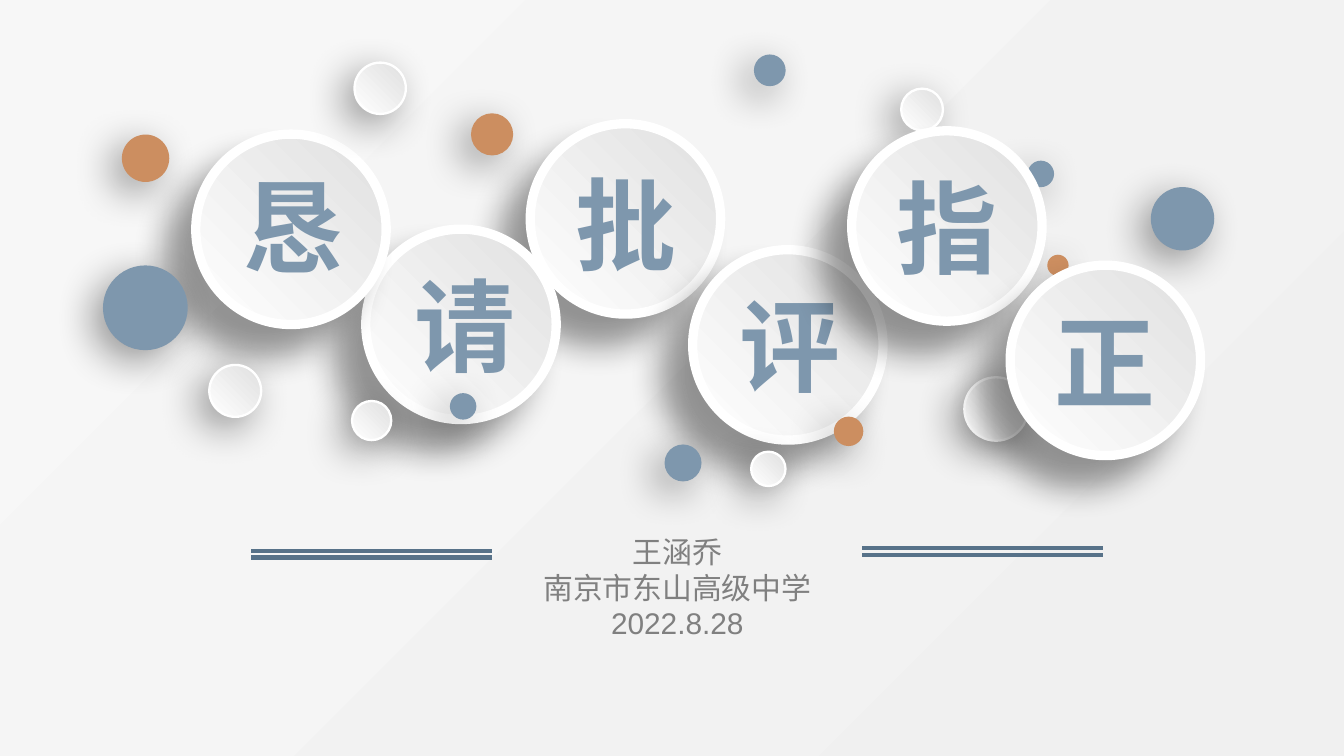
from lxml import etree
from pptx import Presentation
from pptx.dml.color import RGBColor
from pptx.enum import shapes, text
from pptx.oxml import ns
from pptx.util import Pt

BLUE = RGBColor(0x7E, 0x97, 0xAD)
ORANGE = RGBColor(0xCC, 0x8E, 0x60)
RULE = RGBColor(0x57, 0x72, 0x89)
GRAY = RGBColor(0x80, 0x80, 0x80)
WHITE = RGBColor(0xFF, 0xFF, 0xFF)
SILVER = RGBColor(0xE0, 0xE0, 0xE0)
BACK_DARK = RGBColor(0xF0, 0xF0, 0xF0)
BACK_LIGHT = RGBColor(0xF7, 0xF7, 0xF7)

DISC_SIZE = 102
GLYPH_WIDTH, GLYPH_HEIGHT = 70.6, 72.7
RULE_LENGTH, RULE_GAP = 129.3, 3.7

BACK_DISCS = [
    ("批", 335.1, 117.3, 335.5, 119.9),
    ("评", 422.1, 184.8, 423.4, 184.7),
    ("请", 247, 173.8, 249.1, 173.9),
    ("恳", 155.9, 122.9, 157, 121.3),
]
FRONT_DISCS = [("指", 507.3, 121.1), ("正", 592.2, 193.1)]
BUBBLES = [
    (533.6, 219.1, 34, None),
    (199.1, 225.3, 21, None),
    (633.5, 117.2, 34, BLUE),
    (77.9, 164.9, 45.4, BLUE),
    (126, 209.4, 27.8, None),
    (494, 58.7, 22.4, None),
    (203.7, 47.3, 27.5, None),
    (411.6, 251.2, 18.4, None),
    (78, 84.8, 25.4, ORANGE),
    (263.6, 72, 22.6, ORANGE),
    (454.6, 231.1, 15.8, ORANGE),
    (412.4, 37.7, 17, BLUE),
    (248.1, 217.7, 14.2, BLUE),
    (566.8, 142.2, 11.4, ORANGE),
    (365.9, 248, 19.8, BLUE),
    (557.6, 93.2, 14.2, BLUE),
]
RULES = [(134.5, 295), (461.8, 293.5)]
SPEAKER = ["王涵乔", "南京市东山高级中学", "2022.8.28"]


def fill_gradient(fill, start, end, angle):
    fill.gradient()
    fill.gradient_angle = angle
    for stop, color in zip(fill.gradient_stops, (start, end)):
        stop.color.rgb = color


def cast_shadow(circle, blur, distance):
    circle.shadow.inherit = False
    effects = circle._element.spPr.find(ns.qn("a:effectLst"))
    shadow = etree.SubElement(
        effects, ns.qn("a:outerShdw"), blurRad=str(Pt(blur)),
        dist=str(Pt(distance)), dir="8100000", algn="tr", rotWithShape="0")
    black = etree.SubElement(shadow, ns.qn("a:srgbClr"), val="000000")
    etree.SubElement(black, ns.qn("a:alpha"), val="40000")


def add_circle(slide, x, y, size, color, border, blur, distance):
    circle = slide.shapes.add_shape(
        shapes.MSO_SHAPE.OVAL, Pt(x - size / 2), Pt(y - size / 2),
        Pt(size), Pt(size))
    if color is None:
        fill_gradient(circle.fill, SILVER, WHITE, 225)
        circle.line.color.rgb = WHITE
        circle.line.width = Pt(border)
    else:
        circle.fill.solid()
        circle.fill.fore_color.rgb = color
        circle.line.fill.background()
    cast_shadow(circle, blur, distance)
    return circle


def add_disc(slide, x, y):
    return add_circle(slide, x, y, DISC_SIZE, None, 5, 18, 21)


def add_bubble(slide, x, y, size, color):
    add_circle(slide, x, y, size, color, 1.25, 22, 8)


def write_glyph(frame, glyph):
    frame.word_wrap = True
    frame.text = glyph
    paragraph = frame.paragraphs[0]
    paragraph.alignment = text.PP_ALIGN.CENTER
    font = paragraph.runs[0].font
    font.name = "Arial Narrow"
    font.size = Pt(54)
    font.bold = True
    font.color.rgb = BLUE


def add_glyph(slide, glyph, x, y):
    box = slide.shapes.add_textbox(
        Pt(x - GLYPH_WIDTH / 2), Pt(y - GLYPH_HEIGHT / 2),
        Pt(GLYPH_WIDTH), Pt(GLYPH_HEIGHT))
    write_glyph(box.text_frame, glyph)


def add_double_rule(slide, left, top):
    pair = slide.shapes.add_group_shape()
    for y in (top, top + RULE_GAP):
        rule = pair.shapes.add_connector(
            shapes.MSO_CONNECTOR.STRAIGHT,
            Pt(left), Pt(y), Pt(left + RULE_LENGTH), Pt(y))
        rule.line.color.rgb = RULE
        rule.line.width = Pt(2.25)
        etree.SubElement(rule._element.spPr, ns.qn("a:effectLst"))


def write_speaker(placeholder):
    placeholder.left, placeholder.top = Pt(269.6), Pt(282.2)
    placeholder.width, placeholder.height = Pt(186.5), Pt(65.5)
    frame = placeholder.text_frame
    frame.auto_size = text.MSO_AUTO_SIZE.NONE
    frame.vertical_anchor = text.MSO_ANCHOR.TOP
    frame.text = "\n".join(SPEAKER)
    for paragraph in frame.paragraphs:
        paragraph.alignment = text.PP_ALIGN.CENTER
        paragraph.space_before = Pt(0)
        font = paragraph.runs[0].font
        font.name = "Arial"
        font.size = Pt(16)
        font.color.rgb = GRAY


def main():
    deck = Presentation()
    deck.slide_width, deck.slide_height = Pt(720), Pt(405)
    slide = deck.slides.add_slide(deck.slide_layouts[0])
    fill_gradient(slide.background.fill, BACK_DARK, BACK_LIGHT, 135)
    empty_title = slide.shapes.title._element
    empty_title.getparent().remove(empty_title)
    write_speaker(slide.placeholders[1])

    for glyph, x, y, glyph_x, glyph_y in BACK_DISCS:
        add_disc(slide, x, y)
        add_glyph(slide, glyph, glyph_x, glyph_y)
    for bubble in BUBBLES:
        add_bubble(slide, *bubble)
    for glyph, x, y in FRONT_DISCS:
        disc = add_disc(slide, x, y)
        disc.text_frame.vertical_anchor = text.MSO_ANCHOR.MIDDLE
        write_glyph(disc.text_frame, glyph)
    for left, top in RULES:
        add_double_rule(slide, left, top)

    deck.save("out.pptx")


if __name__ == "__main__":
    main()
